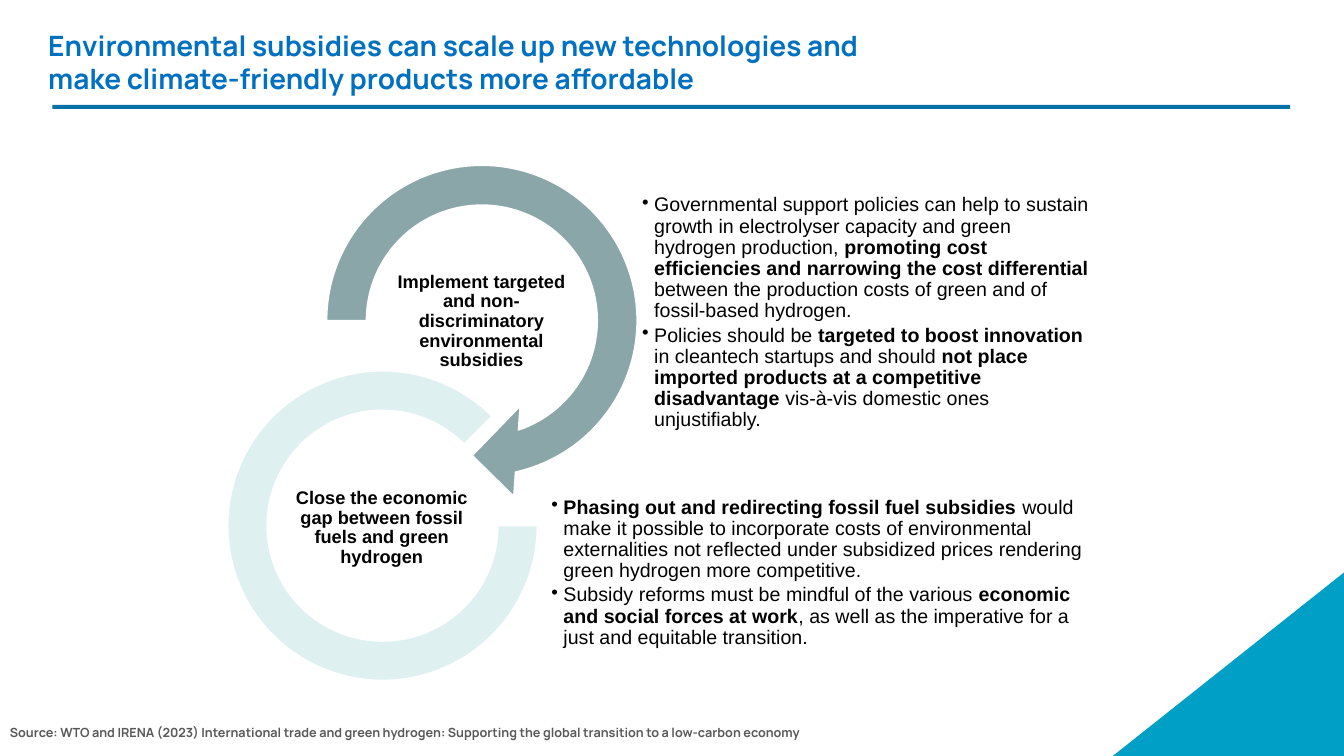
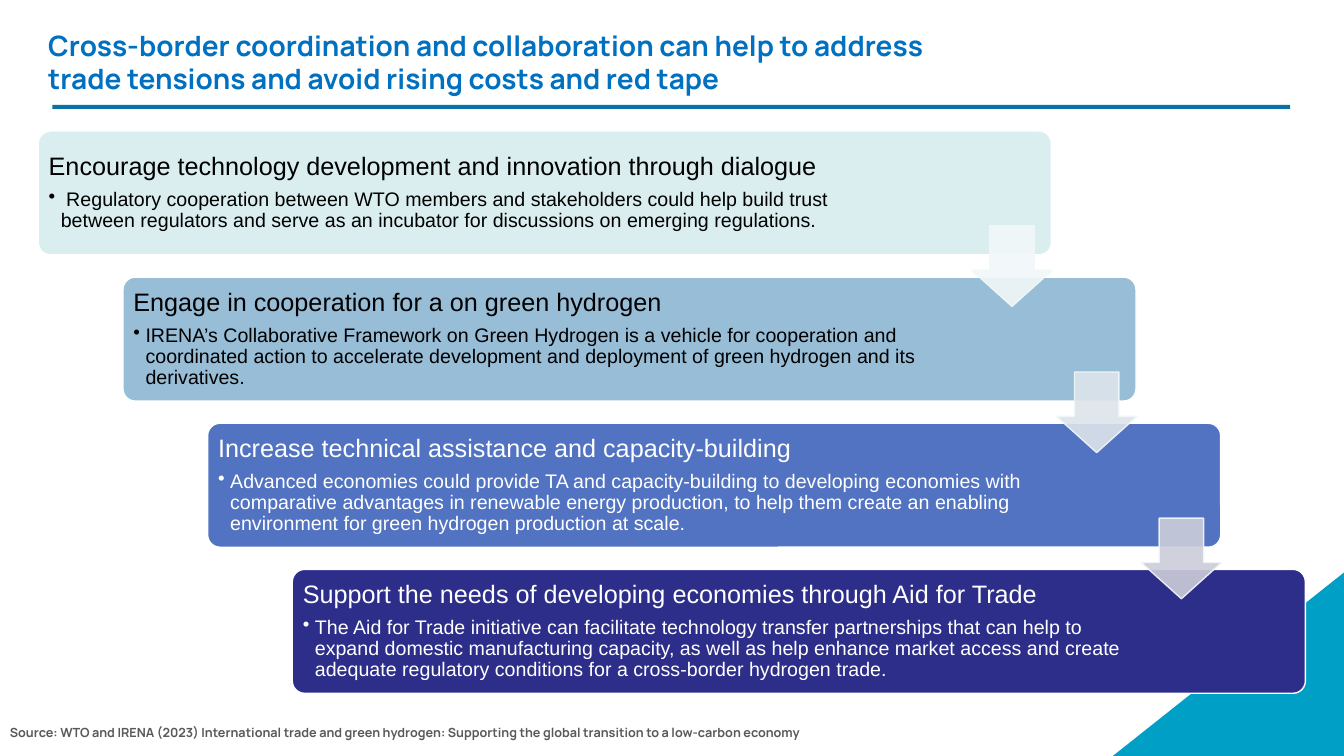
"""Two slides on environmental subsidies and cross-border coordination for green hydrogen."""
from lxml.etree import SubElement
from pptx import Presentation
from pptx.dml.color import RGBColor
from pptx.enum.shapes import MSO_SHAPE as SHAPE
from pptx.enum.text import MSO_ANCHOR as ANCHOR, PP_ALIGN as ALIGN
from pptx.oxml.ns import qn
from pptx.util import Inches, Pt

BLACK = RGBColor(0x00, 0x00, 0x00)
WHITE = RGBColor(0xFF, 0xFF, 0xFF)
TITLE_BLUE = RGBColor(0x00, 0x70, 0xC0)
RULE_BLUE = RGBColor(0x08, 0x72, 0xA6)
CORNER_BLUE = RGBColor(0x00, 0xA0, 0xC6)
SOURCE_GREY = RGBColor(0x59, 0x59, 0x59)
RING_GREY = RGBColor(0x8A, 0xA6, 0xA8)
RING_PALE = RGBColor(0xDF, 0xF0, 0xF1)
STEP_PALE = RGBColor(0xDA, 0xED, 0xEF)
STEP_LIGHT = RGBColor(0x98, 0xBD, 0xD6)
STEP_MID = RGBColor(0x52, 0x73, 0xC1)
STEP_DARK = RGBColor(0x2D, 0x2D, 0x8A)
ARROW_EDGE = RGBColor(0xF1, 0xF8, 0xF9)
ARROW_MID = RGBColor(0xDD, 0xE4, 0xEB)
ARROW_DARK = RGBColor(0xCD, 0xCD, 0xDA)

TITLES = [
    "Environmental subsidies can scale up new technologies and make climate-friendly products more affordable",
    "Cross-border coordination and collaboration can help to address trade tensions and avoid rising costs and red tape",
]
SOURCE = ("Source: WTO and IRENA (2023) International trade and green hydrogen: "
          "Supporting the global transition to a low-carbon economy")

prs = Presentation()
prs.slide_width, prs.slide_height = Inches(13.33), Inches(7.5)
COL, ROW = prs.slide_width / 100, prs.slide_height / 100


def add_shape(s, kind, x, y, w, h, fill, line=None, adj=()):
    sp = s.shapes.add_shape(kind, int(x * COL), int(y * ROW), int(w * COL), int(h * ROW))
    sp.shadow.inherit = False
    sp.fill.solid()
    sp.fill.fore_color.rgb = fill
    if line is None:
        sp.line.fill.background()
    else:
        sp.line.color.rgb = line
        sp.line.width = Pt(1)
    for i, value in enumerate(adj):
        sp.adjustments[i] = value
    return sp


def add_text(s, x, y, w, h, paras, color, font="Arial", inset=None, align=None):
    """Write (text, size, bold, bullet) paragraphs; asterisks toggle bold."""
    sp = s.shapes.add_textbox(int(x * COL), int(y * ROW), int(w * COL), int(h * ROW))
    tf = sp.text_frame
    tf.word_wrap = True
    if inset is not None:
        tf.vertical_anchor = ANCHOR.MIDDLE
        tf.margin_left = tf.margin_right = tf.margin_top = tf.margin_bottom = inset
    for i, (text, size, bold, bullet) in enumerate(paras):
        p = tf.add_paragraph() if i else tf.paragraphs[0]
        p.alignment = align
        if inset is not None:
            p.line_spacing = 0.9
            p.space_after = Pt(size * (0.15 if bullet else 0.35))
        if bullet:
            pPr = p._p.get_or_add_pPr()
            pPr.set("marL", str(Inches(0.12)))
            pPr.set("indent", str(-Inches(0.12)))
            SubElement(pPr, qn("a:buChar")).set("char", "•")
        for j, part in enumerate(text.split("*")):
            if part:
                r = p.add_run()
                r.text = part
                r.font.name, r.font.size = font, Pt(size)
                r.font.bold = bold or j % 2 == 1
                r.font.color.rgb = color


slides = []
for title in TITLES:
    s = prs.slides.add_slide(prs.slide_layouts[6])
    add_shape(s, SHAPE.RECTANGLE, 3.9, 13.87, 92.1, 0.53, RULE_BLUE)
    corner = add_shape(s, SHAPE.RIGHT_TRIANGLE, 82.8, 75.73, 17.2, 24.27, CORNER_BLUE)
    corner._element.spPr.xfrm.set("flipH", "1")
    add_text(s, 2.85, 3.07, 67.35, 10.27, [(title, 20, True, False)], TITLE_BLUE, "Manrope")
    add_text(s, 0, 95.2, 68.8, 3.33, [(SOURCE, 9, True, False)], SOURCE_GREY, "Manrope")
    slides.append(s)

RINGS = [
    (SHAPE.CIRCULAR_ARROW, (22.43, 18.53, 26.85, 47.73), RING_GREY, (0.11, 11.42, 45, 108, 0.125),
     (28.35, 35.87), "Implement targeted and non-discriminatory environmental subsidies",
     (47.7, 27.87, 33.98, 27.07),
     ["Governmental support policies can help to sustain growth in electrolyser capacity and green "
      "hydrogen production, *promoting cost efficiencies and narrowing the cost differential *"
      "between the production costs of green and of fossil-based hydrogen.",
      "Policies should be *targeted to boost innovation *in cleantech startups and should "
      "*not place imported products at a competitive disadvantage *"
      "vis-à-vis domestic ones unjustifiably."]),
    (SHAPE.BLOCK_ARC, (16.95, 49.07, 23.03, 40.93), RING_PALE, (0, 189, 0.127),
     (20.93, 63.2), "Close the economic gap between fossil fuels and green hydrogen",
     (40.95, 62.53, 39.9, 26.53),
     ["*Phasing out and redirecting fossil fuel subsidies *would make it possible to incorporate "
      "costs of environmental externalities not reflected under subsidized prices rendering "
      "green hydrogen more competitive.",
      "Subsidy reforms must be mindful of the various *economic and social forces at work*, "
      "as well as the imperative for a just and equitable transition."]),
]
s = slides[0]
for kind, ring_box, fill, adj, label_at, label, text_box, bullets in RINGS:
    add_shape(s, kind, *ring_box, fill, WHITE, adj)
    add_text(s, *text_box, [(b, 14, False, True) for b in bullets], BLACK, inset=Inches(0.01))
    add_text(s, *label_at, 14.93, 13.33, [(label, 13, True, False)], BLACK,
             inset=Inches(0.01), align=ALIGN.CENTER)

STEPS = [
    (STEP_PALE, BLACK, 64.73, "Encourage technology development and innovation through dialogue",
     " Regulatory cooperation between WTO members and stakeholders could help build trust between "
     "regulators and serve as an incubator for discussions on emerging regulations."),
    (STEP_LIGHT, BLACK, 62.6, "Engage in cooperation for a on green hydrogen",
     "IRENA’s Collaborative Framework on Green Hydrogen is a vehicle for cooperation and coordinated "
     "action to accelerate development and deployment of green hydrogen and its derivatives."),
    (STEP_MID, WHITE, 62.6, "Increase technical assistance and capacity-building",
     "Advanced economies could provide TA and capacity-building to developing economies with "
     "comparative advantages in renewable energy production, to help them create an enabling "
     "environment for green hydrogen production at scale."),
    (STEP_DARK, WHITE, 62.6, "Support the needs of developing economies through Aid for Trade",
     "The Aid for Trade initiative can facilitate technology transfer partnerships that can help to "
     "expand domestic manufacturing capacity, as well as help enhance market access and create "
     "adequate regulatory conditions for a cross-border hydrogen trade."),
]
STEP_X, STEP_Y, STEP_DX, STEP_DY = 2.85, 17.33, 6.3, 19.33
s = slides[1]
for i, (fill, color, width, heading, detail) in enumerate(STEPS):
    x, y = STEP_X + i * STEP_DX, STEP_Y + i * STEP_DY
    add_shape(s, SHAPE.ROUNDED_RECTANGLE, x, y, 75.38, 16.4, fill, WHITE, (0.1,))
    add_text(s, x + 0.25, y + 0.53, width, 15.33,
             [(heading, 18, False, False), (detail, 14, False, True)], color, inset=Inches(0.07))

for i, fill in enumerate([ARROW_EDGE, ARROW_MID, ARROW_DARK]):
    sp = add_shape(s, SHAPE.DOWN_ARROW, STEP_X + 69.45 + i * STEP_DX, STEP_Y + 12.54 + i * STEP_DY,
                   6, 10.67, fill, ARROW_EDGE, (0.55, 0.45))
    for clr in sp._element.spPr.iter(qn("a:srgbClr")):
        SubElement(clr, qn("a:alpha")).set("val", "90000")

prs.save("out.pptx")
